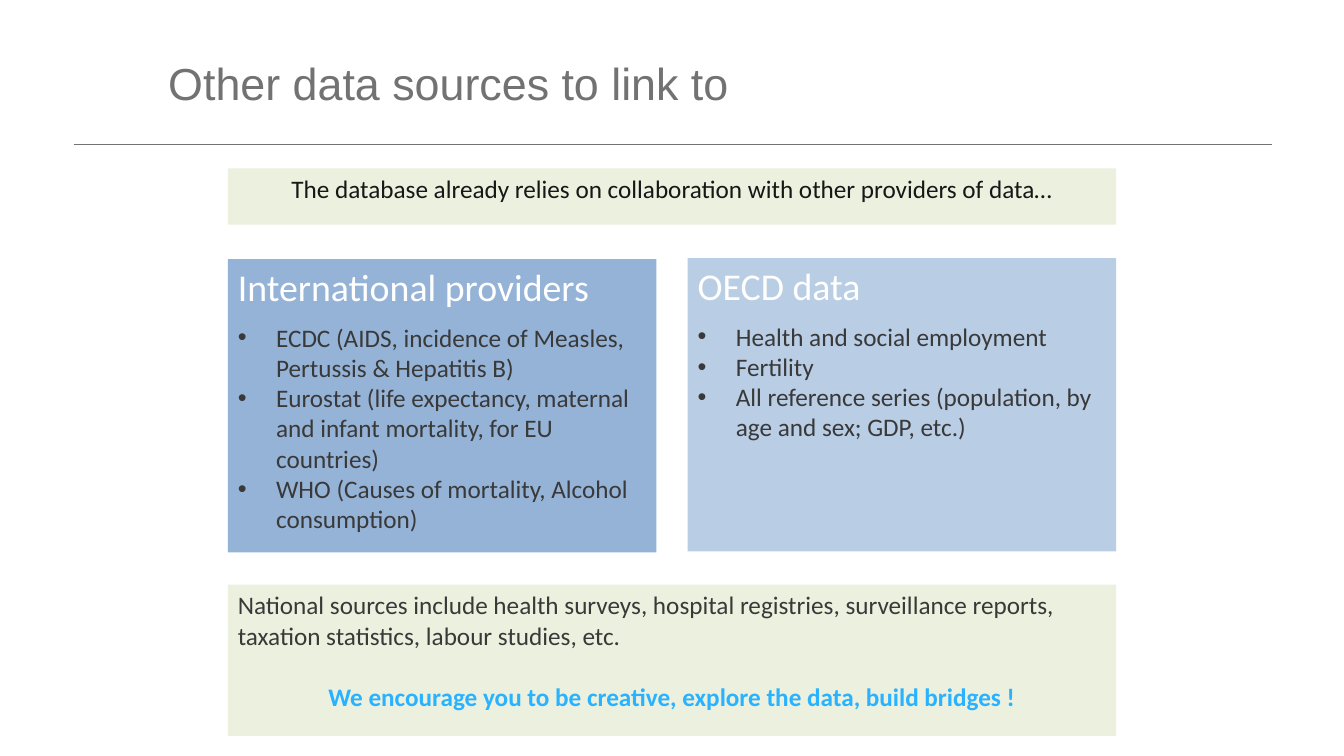
from dataclasses import dataclass

from lxml.etree import SubElement
from pptx import Presentation
from pptx.dml.color import RGBColor
from pptx.enum.shapes import MSO_CONNECTOR, MSO_SHAPE
from pptx.enum.text import MSO_ANCHOR, PP_ALIGN
from pptx.oxml.ns import qn
from pptx.slide import Slide
from pptx.text.text import TextFrame
from pptx.util import Inches, Pt


@dataclass(frozen=True)
class Theme:
    title_font: str = "Arial"
    body_font: str = "Calibri"
    title_size: int = 32
    heading_size: int = 27
    body_size: int = 18
    grey: str = "727272"
    white: str = "FFFFFF"
    body: str = "393939"
    intro: str = "171717"
    accent: str = "29B2FF"
    blue: str = "95B3D7"
    light_blue: str = "B9CDE5"
    green: str = "EBF1DE"


THEME = Theme()


@dataclass(frozen=True)
class Line:
    text: str
    color: str = THEME.body
    size: int = THEME.body_size
    font: str = THEME.body_font
    bold: bool = False
    align: PP_ALIGN = PP_ALIGN.LEFT
    before: int = 0
    after: int = 0
    bullet: bool = False


@dataclass(frozen=True)
class Panel:
    left: float
    top: float
    width: float
    height: float
    fill: str
    lines: list[Line]


def provider_lines(heading: str, sources: list[str]) -> list[Line]:
    title = Line(heading, THEME.white, THEME.heading_size, after=9)
    return [title] + [Line(source, bullet=True) for source in sources]


LEFT, FULL_WIDTH, COLUMN_WIDTH = 2.26, 8.81, 4.25
RIGHT_COLUMN = LEFT + FULL_WIDTH - COLUMN_WIDTH

PANELS = [
    Panel(LEFT, 1.67, FULL_WIDTH, 0.56, THEME.green, [
        Line("The database already relies on collaboration with other providers of data…",
             THEME.intro, align=PP_ALIGN.CENTER),
    ]),
    Panel(LEFT, 2.57, COLUMN_WIDTH, 2.91, THEME.blue, provider_lines("International providers", [
        "ECDC (AIDS, incidence of Measles, Pertussis & Hepatitis B)",
        "Eurostat (life expectancy, maternal and infant mortality, for EU countries)",
        "WHO (Causes of mortality, Alcohol consumption)",
    ])),
    Panel(RIGHT_COLUMN, 2.56, COLUMN_WIDTH, 2.91, THEME.light_blue, provider_lines("OECD data", [
        "Health and social employment",
        "Fertility",
        "All reference series (population, by age and sex; GDP, etc.)",
    ])),
    Panel(LEFT, 5.8, FULL_WIDTH, 1.5, THEME.green, [
        Line("National sources include health surveys, hospital registries, "
             "surveillance reports, taxation statistics, labour studies, etc."),
        Line("We encourage you to be creative, explore the data, build bridges !",
             THEME.accent, bold=True, align=PP_ALIGN.CENTER, before=22),
    ]),
]


def write_lines(frame: TextFrame, lines: list[Line], anchor: MSO_ANCHOR) -> None:
    frame.word_wrap = True
    frame.vertical_anchor = anchor
    for index, line in enumerate(lines):
        paragraph = frame.add_paragraph() if index else frame.paragraphs[0]
        paragraph.text = line.text
        paragraph.alignment = line.align
        paragraph.space_before = Pt(line.before)
        paragraph.space_after = Pt(line.after)
        if line.bullet:
            properties = paragraph._p.get_or_add_pPr()
            properties.set("marL", str(Inches(0.38)))
            properties.set("indent", str(-Inches(0.38)))
            SubElement(properties, qn("a:buFont"), typeface=THEME.title_font)
            SubElement(properties, qn("a:buChar"), char="•")
        font = paragraph.font
        font.name = line.font
        font.size = Pt(line.size)
        font.bold = line.bold
        font.color.rgb = RGBColor.from_string(line.color)


def draw_title(slide: Slide) -> None:
    title = slide.shapes.add_textbox(Inches(1.57), Inches(0.26), Inches(10.81), Inches(1.12))
    heading = Line("Other data sources to link to", THEME.grey, THEME.title_size, THEME.title_font)
    write_lines(title.text_frame, [heading], MSO_ANCHOR.MIDDLE)
    rule = slide.shapes.add_connector(
        MSO_CONNECTOR.STRAIGHT, Inches(0.73), Inches(1.43), Inches(12.62), Inches(1.43))
    rule.line.color.rgb = RGBColor.from_string(THEME.grey)
    rule.line.width = Pt(0.5)
    SubElement(rule._element.spPr, qn("a:effectLst"))


def draw_panel(slide: Slide, panel: Panel) -> None:
    box = slide.shapes.add_shape(
        MSO_SHAPE.RECTANGLE, Inches(panel.left), Inches(panel.top),
        Inches(panel.width), Inches(panel.height))
    box.shadow.inherit = False
    box.fill.solid()
    box.fill.fore_color.rgb = RGBColor.from_string(panel.fill)
    box.line.fill.background()
    write_lines(box.text_frame, panel.lines, MSO_ANCHOR.TOP)


def main() -> None:
    presentation = Presentation()
    presentation.slide_width = Inches(13.33)
    presentation.slide_height = Inches(7.5)
    slide = presentation.slides.add_slide(presentation.slide_layouts[6])
    draw_title(slide)
    for panel in PANELS:
        draw_panel(slide, panel)
    presentation.save("out.pptx")


if __name__ == "__main__":
    main()
